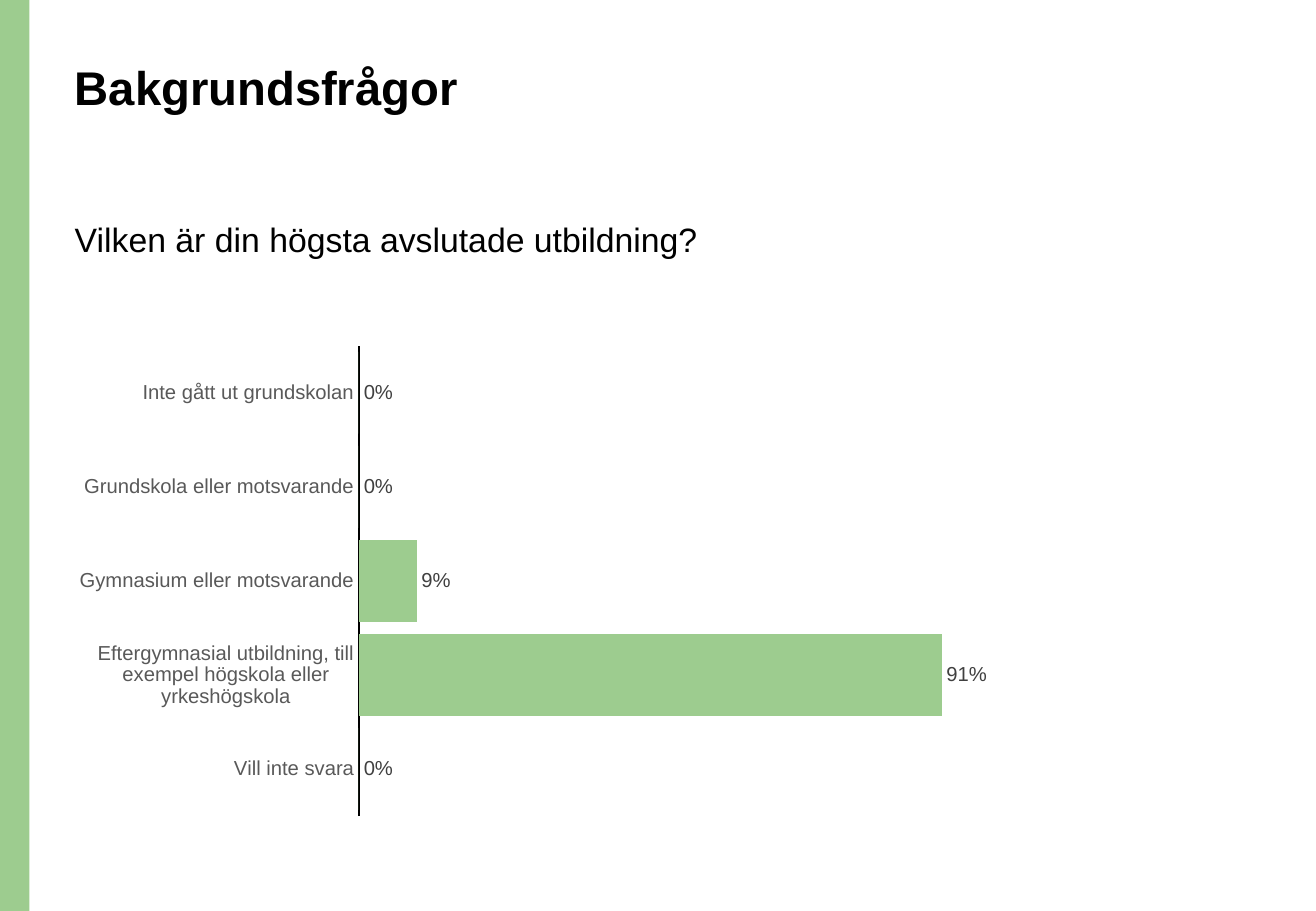
import pptx
import pptx.chart.data
import pptx.dml.color
import pptx.enum.chart
import pptx.enum.shapes
import pptx.enum.text
import pptx.oxml
import pptx.oxml.ns
import pptx.util

PX = 7620
FONT = "Arial"
GREEN = pptx.dml.color.RGBColor(0x9D, 0xCC, 0x8F)
BLACK = pptx.dml.color.RGBColor(0, 0, 0)
AXIS_GRAY = pptx.dml.color.RGBColor(0x59, 0x59, 0x59)
LABEL_GRAY = pptx.dml.color.RGBColor(0x40, 0x40, 0x40)

EDUCATION = {
    "Inte gått ut grundskolan": 0,
    "Grundskola eller motsvarande": 0,
    "Gymnasium eller motsvarande": 0.09,
    "Eftergymnasial utbildning, till exempel högskola eller yrkeshögskola": 0.91,
    "Vill inte svara": 0,
}


def px(*lengths):
    return [pptx.util.Emu(length * PX) for length in lengths]


def set_font(font, size, color, bold=False):
    font.name = FONT
    font.size = pptx.util.Pt(size)
    font.color.rgb = color
    font.bold = bold


def place(shape, left, top, width, height):
    shape.left, shape.top, shape.width, shape.height = px(left, top, width, height)


def write_text(box, text, size, bold=False):
    frame = box.text_frame
    frame.word_wrap = True
    frame.auto_size = pptx.enum.text.MSO_AUTO_SIZE.NONE
    frame.vertical_anchor = pptx.enum.text.MSO_ANCHOR.TOP
    frame.text = text
    para = frame.paragraphs[0]
    para.alignment = pptx.enum.text.PP_ALIGN.LEFT
    para.line_spacing = 0.9
    set_font(para.font, size, BLACK, bold)


def add_side_band(page):
    band = page.shapes.add_shape(
        pptx.enum.shapes.MSO_SHAPE.RECTANGLE, *px(0, 0, 29, 900))
    band.shadow.inherit = False
    band.fill.solid()
    band.fill.fore_color.rgb = GREEN
    band.line.fill.background()


def set_plot_layout(chart, **fractions):
    plot_area = chart.plots[0]._element.getparent()
    for old in plot_area.findall(pptx.oxml.ns.qn("c:layout")):
        plot_area.remove(old)
    modes = '<c:xMode val="edge"/><c:yMode val="edge"/>'
    sizes = "".join(f'<c:{key} val="{value}"/>' for key, value in fractions.items())
    plot_area.insert(0, pptx.oxml.parse_xml(
        f'<c:layout {pptx.oxml.ns.nsdecls("c")}><c:manualLayout>'
        f'<c:layoutTarget val="inner"/>{modes}{sizes}</c:manualLayout></c:layout>'))


def format_axes(chart):
    axis = chart.category_axis
    axis.reverse_order = True
    axis.has_major_gridlines = False
    axis.major_tick_mark = pptx.enum.chart.XL_TICK_MARK.NONE
    axis.format.line.color.rgb = BLACK
    axis.format.line.width = pptx.util.Pt(0.75)
    set_font(axis.tick_labels.font, 12, AXIS_GRAY)
    scale = chart.value_axis
    scale.minimum_scale = 0
    scale.maximum_scale = 1
    scale.has_major_gridlines = False
    scale.visible = False


def add_bar_chart(page, answers, left, top, width, height):
    data = pptx.chart.data.CategoryChartData(number_format="0%")
    data.categories = answers.keys()
    data.add_series("Series 1", answers.values())
    chart = page.shapes.add_chart(
        pptx.enum.chart.XL_CHART_TYPE.BAR_CLUSTERED,
        *px(left, top, width, height), data).chart
    set_font(chart.font, 10, BLACK)
    chart.has_legend = False
    chart.has_title = False
    format_axes(chart)
    plot = chart.plots[0]
    plot.gap_width = 15
    plot.vary_by_categories = False
    bars = plot.series[0]
    bars.format.fill.solid()
    bars.format.fill.fore_color.rgb = GREEN
    labels = bars.data_labels
    labels.show_value = True
    labels.number_format = "0%"
    labels.number_format_is_linked = False
    labels.position = pptx.enum.chart.XL_LABEL_POSITION.OUTSIDE_END
    set_font(labels.font, 12, LABEL_GRAY)
    set_plot_layout(chart, x=0.31, y=0.02, w=0.67, h=0.96)


def main():
    deck = pptx.Presentation()
    deck.slide_width, deck.slide_height = px(1300, 900)
    page = deck.slides.add_slide(deck.slide_layouts.get_by_name("Title Only"))
    add_side_band(page)
    title = page.shapes.title
    place(title, 62, 58, 1121, 122)
    write_text(title, "Bakgrundsfrågor", 28, bold=True)
    question = page.shapes.add_textbox(*px(62, 215, 724, 89))
    write_text(question, "Vilken är din högsta avslutade utbildning?", 20)
    add_bar_chart(page, EDUCATION, 62, 332, 944, 484)
    deck.save("out.pptx")


if __name__ == "__main__":
    main()
